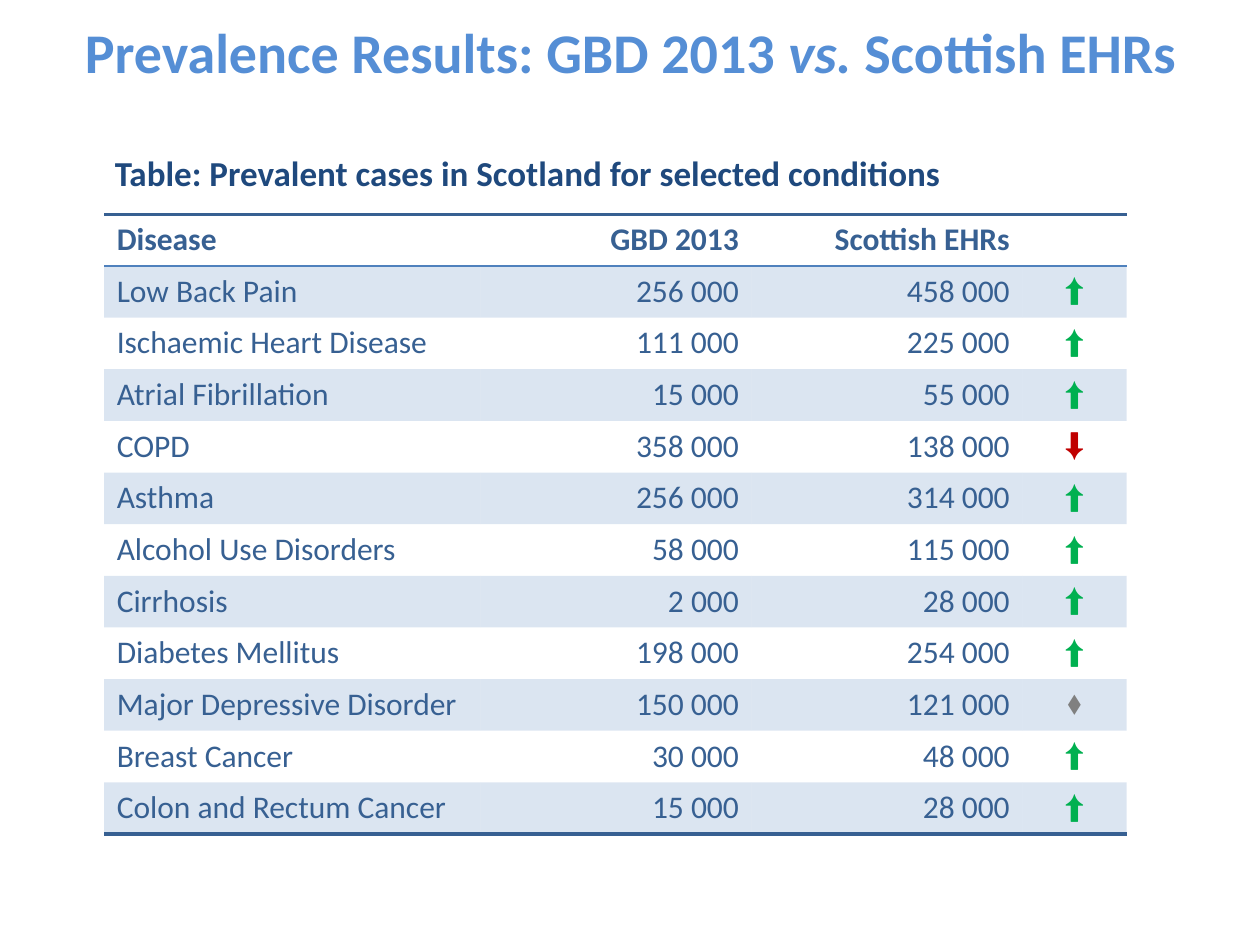
from dataclasses import dataclass

from pptx import Presentation
from pptx.dml.color import RGBColor
from pptx.enum import text
from pptx.oxml import ns, xmlchemy
from pptx.util import Cm, Pt


@dataclass(frozen=True)
class Theme:
    """Colours, fonts and type sizes of the slide."""
    title: str = "558ED5"
    caption: str = "1F497D"
    ink: str = "376092"
    accent: str = "4F81BD"
    font: str = "Calibri"
    symbol_font: str = "Arial"
    title_size: int = 32
    caption_size: int = 20
    table_size: int = 18
    band_opacity: int = 20
    heavy_rule: float = 2.25
    light_rule: float = 1


THEME = Theme()
NO_STYLE = "{2D5ABB26-0587-4C30-8999-92F81FD0307C}"
SYMBOL_COLOURS = {"⬆": "00B050", "⬇": "C00000", "⬧": "808080"}
ALIGNMENTS = [text.PP_ALIGN.LEFT, text.PP_ALIGN.RIGHT, text.PP_ALIGN.RIGHT, text.PP_ALIGN.CENTER]
COLUMN_WIDTHS = [7.59, 5.46, 5.46, 2.1]
ROWS = [
    ("Disease", "GBD 2013", "Scottish EHRs", ""),
    ("Low Back Pain", "256 000", "458 000", "⬆"),
    ("Ischaemic Heart Disease", "111 000", "225 000", "⬆"),
    ("Atrial Fibrillation", "15 000", "55 000", "⬆"),
    ("COPD", "358 000", "138 000", "⬇"),
    ("Asthma", "256 000", "314 000", "⬆"),
    ("Alcohol Use Disorders", "58 000", "115 000", "⬆"),
    ("Cirrhosis", "2 000", "28 000", "⬆"),
    ("Diabetes Mellitus", "198 000", "254 000", "⬆"),
    ("Major Depressive Disorder", "150 000", "121 000", "⬧"),
    ("Breast Cancer", "30 000", "48 000", "⬆"),
    ("Colon and Rectum Cancer", "15 000", "28 000", "⬆"),
]


def format_font(font, size, colour, bold=False, name=THEME.font):
    """Set the size, colour, weight and typeface of a font."""
    font.size, font.bold, font.name = Pt(size), bold, name
    font.color.rgb = RGBColor.from_string(colour)


def add_child(parent, tag, **attributes):
    """Append an XML element with the given attributes."""
    child = xmlchemy.OxmlElement(tag)
    for name, value in attributes.items():
        child.set(name, str(value))
    parent.append(child)
    return child


def place(shape, box):
    """Move a placeholder to a box and anchor its text at the top."""
    shape.left, shape.top, shape.width, shape.height = map(Cm, box)
    frame = shape.text_frame
    frame.word_wrap = True
    frame.auto_size = text.MSO_AUTO_SIZE.NONE
    frame.vertical_anchor = text.MSO_ANCHOR.TOP
    return frame


def fill_title(slide, box):
    """Write the slide title in its placeholder."""
    paragraph = place(slide.shapes.title, box).paragraphs[0]
    paragraph.alignment = text.PP_ALIGN.CENTER
    for wording in ("Prevalence Results: GBD 2013 ", "vs.", " Scottish EHRs"):
        run = paragraph.add_run()
        run.text = wording
        format_font(run.font, THEME.title_size, THEME.title, bold=True)
        run.font.italic = wording == "vs."


def fill_caption(slide, box):
    """Write the table caption in the body placeholder."""
    paragraph = place(slide.placeholders[1], box).paragraphs[0]
    paragraph.text = "Table: Prevalent cases in Scotland for selected conditions"
    paragraph.level = 1
    paragraph.space_before = Pt(0)
    properties = paragraph._p.get_or_add_pPr()
    properties.set("marL", str(Cm(2.77)))
    properties.set("indent", str(Cm(-1.5)))
    add_child(properties, "a:buNone")
    format_font(paragraph.runs[0].font, THEME.caption_size, THEME.caption, bold=True)


def add_rule(cell, tag, colour, width):
    """Draw one border of a cell."""
    line = add_child(cell._tc.get_or_add_tcPr(), tag, w=Pt(width))
    add_child(add_child(line, "a:solidFill"), "a:srgbClr", val=colour)


def fill_cell(cell, banded):
    """Tint a banded cell and leave any other one clear."""
    if not banded:
        cell.fill.background()
        return
    cell.fill.solid()
    cell.fill.fore_color.rgb = RGBColor.from_string(THEME.accent)
    solid = cell._tc.tcPr.find(ns.qn("a:solidFill"))
    add_child(solid[0], "a:alpha", val=THEME.band_opacity * 1000)


def write_cell(cell, wording, alignment, header):
    """Write and format the text of a cell."""
    paragraph = cell.text_frame.paragraphs[0]
    paragraph.text = wording
    paragraph.alignment = alignment
    format_font(paragraph.font, THEME.table_size, THEME.ink, header)
    name = THEME.symbol_font if wording in SYMBOL_COLOURS else THEME.font
    colour = SYMBOL_COLOURS.get(wording, THEME.ink)
    for run in paragraph.runs:
        format_font(run.font, THEME.table_size, colour, header, name)


def add_prevalence_table(slide, box):
    """Build the table of prevalent cases."""
    table = slide.shapes.add_table(len(ROWS), len(COLUMN_WIDTHS), *map(Cm, box)).table
    table.first_row = table.horz_banding = False
    table._tbl.tblPr.find(ns.qn("a:tableStyleId")).text = NO_STYLE
    for column, width in zip(table.columns, COLUMN_WIDTHS):
        column.width = Cm(width)
    for index, values in enumerate(ROWS):
        table.rows[index].height = Cm(box[3] / len(ROWS))
        for cell, wording, alignment in zip(table.rows[index].cells, values, ALIGNMENTS):
            write_cell(cell, wording, alignment, index == 0)
            if index == 0:
                add_rule(cell, "a:lnT", THEME.ink, THEME.heavy_rule)
                add_rule(cell, "a:lnB", THEME.accent, THEME.light_rule)
            elif index == len(ROWS) - 1:
                add_rule(cell, "a:lnB", THEME.ink, THEME.heavy_rule)
            fill_cell(cell, index % 2 == 1)


def main():
    """Build and save the presentation."""
    presentation = Presentation()
    presentation.slide_width, presentation.slide_height = Cm(25.4), Cm(19.05)
    slide = presentation.slides.add_slide(presentation.slide_layouts[1])
    fill_title(slide, (0.61, 0.23, 24.2, 6.07))
    add_prevalence_table(slide, (2.1, 4.32, sum(COLUMN_WIDTHS), 12.5))
    fill_caption(slide, (0.79, 2.92, 24.69, 1.09))
    presentation.save("out.pptx")


if __name__ == "__main__":
    main()
